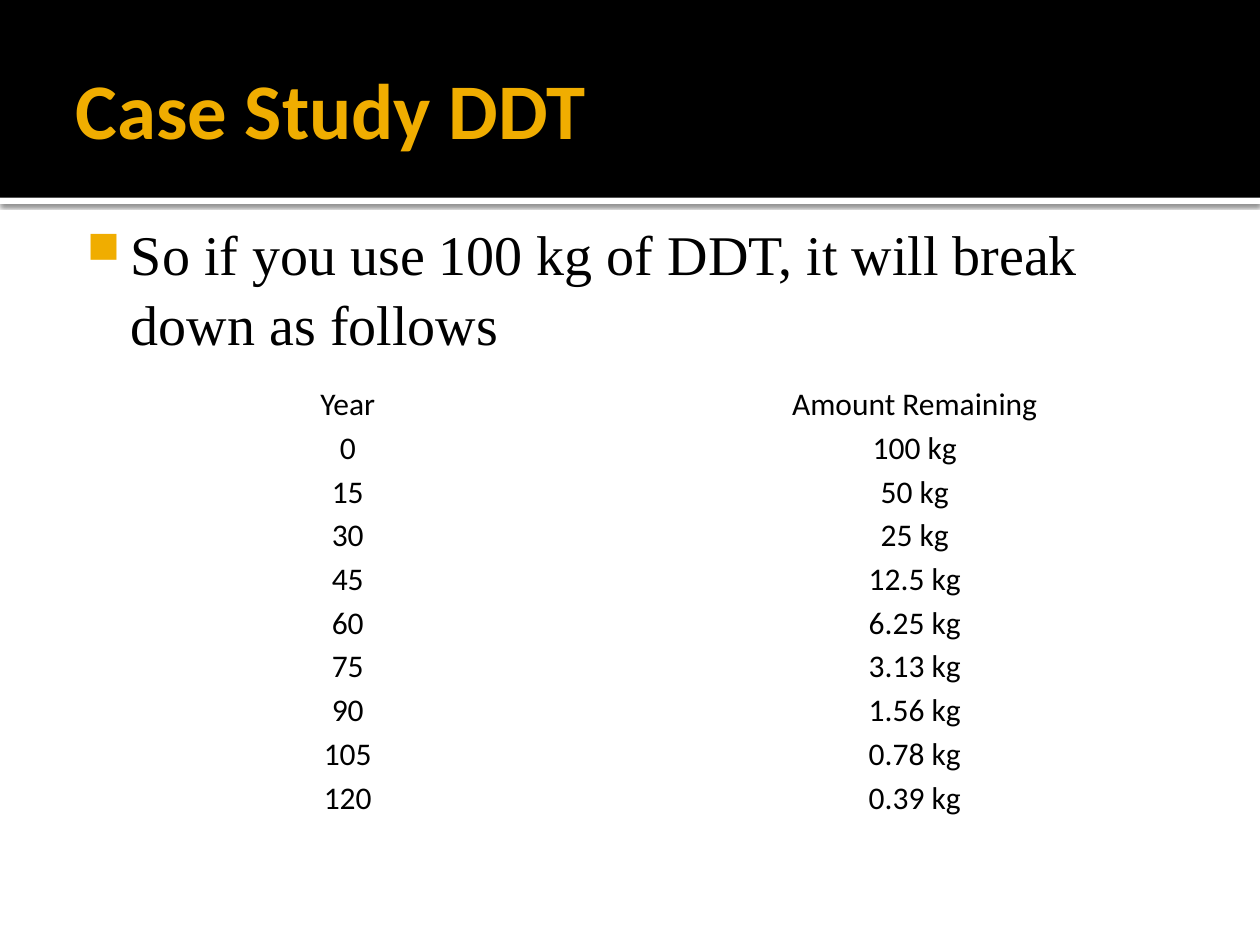
from dataclasses import dataclass

from lxml import etree
from pptx import Presentation
from pptx.dml.color import RGBColor
from pptx.enum.shapes import MSO_SHAPE
from pptx.enum.text import MSO_ANCHOR, MSO_AUTO_SIZE, PP_ALIGN
from pptx.oxml.ns import qn
from pptx.util import Pt

RECTANGLE = MSO_SHAPE.RECTANGLE
TOP, MIDDLE = MSO_ANCHOR.TOP, MSO_ANCHOR.MIDDLE
LEFT, CENTER = PP_ALIGN.LEFT, PP_ALIGN.CENTER
NO_AUTOFIT = MSO_AUTO_SIZE.NONE


@dataclass(frozen=True)
class Theme:
    gold: str = "F0AD00"
    black: str = "000000"
    white: str = "FFFFFF"
    sans: str = "Calibri"
    serif: str = "Times New Roman"
    title_size: float = 45
    body_size: float = 32
    table_size: float = 18


@dataclass(frozen=True)
class Box:
    """A rectangle, in points."""
    left: float
    top: float
    width: float
    height: float

    def lengths(self):
        return Pt(self.left), Pt(self.top), Pt(self.width), Pt(self.height)


@dataclass(frozen=True)
class Band:
    box: Box
    color: str
    has_shadow: bool = False


THEME = Theme()
SLIDE_WIDTH, SLIDE_HEIGHT = 720, 540
BANDS = [
    Band(Box(0, 113, SLIDE_WIDTH, 3.6), THEME.white, has_shadow=True),
    Band(Box(0, 0, SLIDE_WIDTH, 113), THEME.black),
]
TITLE_BOX = Box(36, 12.25, 648, 98.6)
STATEMENT_BOX = Box(36, 116.6, 648, 364.4)
ROW_HEIGHT = 25
CELL_MARGIN = 1.44
DECAY = [
    ("Year", "Amount Remaining"),
    ("0", "100 kg"),
    ("15", "50 kg"),
    ("30", "25 kg"),
    ("45", "12.5 kg"),
    ("60", "6.25 kg"),
    ("75", "3.13 kg"),
    ("90", "1.56 kg"),
    ("105", "0.78 kg"),
    ("120", "0.39 kg"),
]
TABLE_BOX = Box(36.7, 218.9, 648, ROW_HEIGHT * len(DECAY))


def add_run(paragraph, text: str, font_name: str, size: float, color: str, bold: bool = False) -> None:
    run = paragraph.add_run()
    run.text = text
    run.font.name = font_name
    run.font.size = Pt(size)
    run.font.bold = bold
    run.font.color.rgb = RGBColor.from_string(color)


def set_margins(frame, left: float, top: float, right: float, bottom: float) -> None:
    frame.margin_left, frame.margin_top = Pt(left), Pt(top)
    frame.margin_right, frame.margin_bottom = Pt(right), Pt(bottom)


def add_shadow(shape) -> None:
    """Give the shape a soft black shadow straight below it."""
    effects = shape._element.spPr.find(qn("a:effectLst"))
    shadow = etree.SubElement(
        effects, qn("a:outerShdw"), blurRad=str(Pt(2.5)), dist=str(Pt(0.8)),
        dir="5400000", algn="tl", rotWithShape="0")
    color = etree.SubElement(shadow, qn("a:srgbClr"), val=THEME.black)
    etree.SubElement(color, qn("a:alpha"), val="60000")


def add_band(slide, band: Band) -> None:
    shape = slide.shapes.add_shape(RECTANGLE, *band.box.lengths())
    shape.shadow.inherit = False
    shape.fill.solid()
    shape.fill.fore_color.rgb = RGBColor.from_string(band.color)
    shape.line.fill.background()
    if band.has_shadow:
        add_shadow(shape)


def set_title(slide, text: str) -> None:
    title = slide.shapes.title
    title.left, title.top, title.width, title.height = TITLE_BOX.lengths()
    # The placeholder exists before the bands, so bring it in front of them.
    slide.shapes._spTree.append(title._element)
    frame = title.text_frame
    frame.word_wrap = True
    frame.auto_size = NO_AUTOFIT
    frame.vertical_anchor = MIDDLE
    set_margins(frame, 7.2, 3.6, 3.6, 3.6)
    paragraph = frame.paragraphs[0]
    paragraph.alignment = LEFT
    add_run(paragraph, text, THEME.sans, THEME.title_size, THEME.gold, bold=True)


def add_bullet(paragraph) -> None:
    properties = paragraph._p.get_or_add_pPr()
    properties.set("marL", str(Pt(34.56)))
    properties.set("indent", str(Pt(-25.2)))
    color = etree.SubElement(properties, qn("a:buClr"))
    etree.SubElement(color, qn("a:srgbClr"), val=THEME.gold)
    etree.SubElement(properties, qn("a:buSzPct"), val="80000")
    etree.SubElement(properties, qn("a:buChar"), char="■")


def add_statement(slide, text: str) -> None:
    frame = slide.shapes.add_textbox(*STATEMENT_BOX.lengths()).text_frame
    frame.word_wrap = True
    frame.vertical_anchor = TOP
    set_margins(frame, 4.32, 7.2, 7.2, 3.6)
    paragraph = frame.paragraphs[0]
    add_bullet(paragraph)
    paragraph.line_spacing = 1.04
    add_run(paragraph, text, THEME.serif, THEME.body_size, THEME.black)


def add_decay_table(slide) -> None:
    table = slide.shapes.add_table(len(DECAY), len(DECAY[0]), *TABLE_BOX.lengths()).table
    table.first_row = table.horz_banding = False
    for row, values in zip(table.rows, DECAY):
        row.height = Pt(ROW_HEIGHT)
        for cell, value in zip(row.cells, values):
            cell.fill.background()
            cell.vertical_anchor = MIDDLE
            set_margins(cell, *[CELL_MARGIN] * 4)
            paragraph = cell.text_frame.paragraphs[0]
            paragraph.alignment = CENTER
            add_run(paragraph, value, THEME.sans, THEME.table_size, THEME.black)


def main() -> None:
    presentation = Presentation()
    presentation.slide_width, presentation.slide_height = Pt(SLIDE_WIDTH), Pt(SLIDE_HEIGHT)
    slide = presentation.slides.add_slide(presentation.slide_layouts[5])
    for band in BANDS:
        add_band(slide, band)
    set_title(slide, "Case Study DDT")
    add_statement(slide, "So if you use 100 kg of DDT, it will break down as follows")
    add_decay_table(slide)
    presentation.save("out.pptx")


if __name__ == "__main__":
    main()
